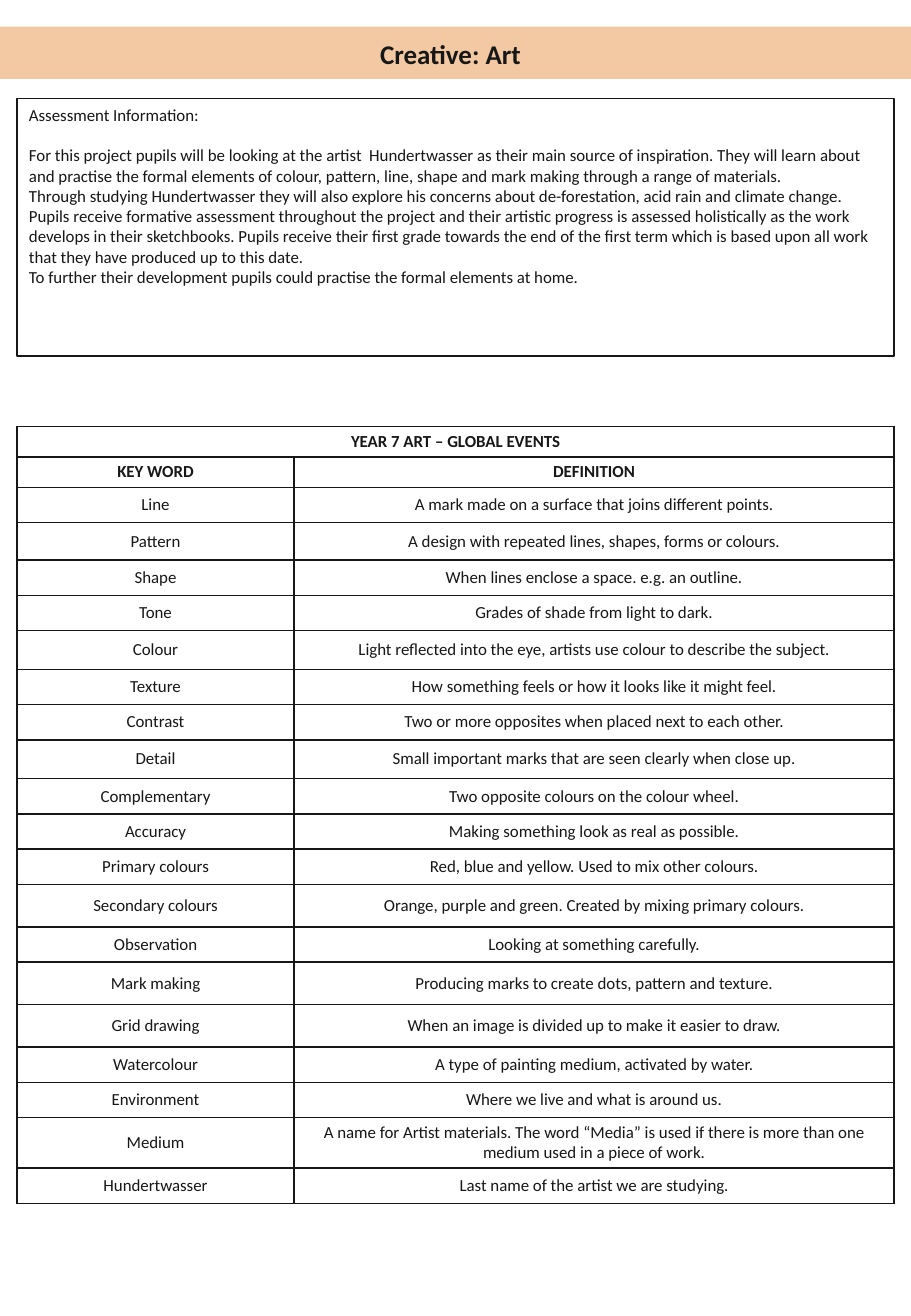
import dataclasses

import lxml.etree
import pptx
import pptx.dml.color
import pptx.enum.shapes
import pptx.enum.text
import pptx.oxml.ns
import pptx.util

COLUMNS, ROWS = 750, 1083
CELL = pptx.util.Inches(0.01)
ALIGN = pptx.enum.text.PP_ALIGN
ANCHOR = pptx.enum.text.MSO_ANCHOR


@dataclasses.dataclass(frozen=True)
class Theme:
    """Colours, font and type sizes of the slide."""
    ink: str = "181717"
    banner: str = "F3C9A4"
    paper: str = "FFFFFF"
    font: str = "Calibri"
    title_size: float = 16
    body_size: float = 10
    frame_width: float = 0.75
    border_width: float = 1


THEME = Theme()

ASSESSMENT = [
    "Assessment Information:",
    "For this project pupils will be looking at the artist  Hundertwasser as their main source of "
    "inspiration. They will learn about and practise the formal elements of colour, pattern, line, "
    "shape and mark making through a range of materials.",
    "Through studying Hundertwasser they will also explore his concerns about de-forestation, acid "
    "rain and climate change.",
    "Pupils receive formative assessment throughout the project and their artistic progress is "
    "assessed holistically as the work develops in their sketchbooks. Pupils receive their first "
    "grade towards the end of the first term which is based upon all work that they have produced "
    "up to this date.",
    "To further their development pupils could practise the formal elements at home.",
]

TABLE_TITLE = "YEAR 7 ART – GLOBAL EVENTS"
HEADINGS = ("KEY WORD", "DEFINITION")
KEY_WORDS = [
    ("Line", "A mark made on a surface that joins different points."),
    ("Pattern", "A design with repeated lines, shapes, forms or colours."),
    ("Shape", "When lines enclose a space. e.g. an outline."),
    ("Tone", "Grades of shade from light to dark."),
    ("Colour", "Light reflected into the eye, artists use colour to describe the subject."),
    ("Texture", "How something feels or how it looks like it might feel."),
    ("Contrast", "Two or more opposites when placed next to each other."),
    ("Detail", "Small important marks that are seen clearly when close up."),
    ("Complementary", "Two opposite colours on the colour wheel."),
    ("Accuracy", "Making something look as real as possible."),
    ("Primary colours", "Red, blue and yellow. Used to mix other colours."),
    ("Secondary colours", "Orange, purple and green. Created by mixing primary colours."),
    ("Observation", "Looking at something carefully."),
    ("Mark making", "Producing marks to create dots, pattern and texture."),
    ("Grid drawing", "When an image is divided up to make it easier to draw."),
    ("Watercolour", "A type of painting medium, activated by water."),
    ("Environment", "Where we live and what is around us."),
    ("Medium", "A name for Artist materials. The word “Media” is used if there is more than one "
               "medium used in a piece of work."),
    ("Hundertwasser", "Last name of the artist we are studying."),
]
HEADING_HEIGHT, WORD_HEIGHT = 25, 29
TALL_ROWS = {"Pattern": 31, "Colour": 32, "Detail": 32, "Secondary colours": 35,
             "Mark making": 35, "Grid drawing": 35, "Medium": 41}


def colour(value):
    """Return the colour object for a hex value."""
    return pptx.dml.color.RGBColor.from_string(value)


def write(paragraph, text, size, bold=False, alignment=ALIGN.LEFT):
    """Add one styled run of text to a paragraph."""
    paragraph.alignment = alignment
    run = paragraph.add_run()
    run.text = text
    run.font.name = THEME.font
    run.font.size = pptx.util.Pt(size)
    run.font.bold = bold
    run.font.color.rgb = colour(THEME.ink)


def add_panel(slide, box):
    """Add a plain rectangle with top-anchored text on the grid."""
    panel = slide.shapes.add_shape(
        pptx.enum.shapes.MSO_SHAPE.RECTANGLE, *(CELL * length for length in box))
    panel.shadow.inherit = False
    panel.fill.background()
    panel.line.fill.background()
    panel.text_frame.word_wrap = True
    panel.text_frame.vertical_anchor = ANCHOR.TOP
    return panel


def add_banner(slide, box):
    """Place the coloured title band."""
    banner = add_panel(slide, box)
    banner.fill.solid()
    banner.fill.fore_color.rgb = colour(THEME.banner)
    banner.text_frame.margin_top = CELL * 9
    banner.text_frame.margin_right = CELL * 18
    write(banner.text_frame.paragraphs[0], "Creative: Art", THEME.title_size, True, ALIGN.CENTER)


def add_assessment(slide, box):
    """Place the framed assessment text with a gap below its heading."""
    panel = add_panel(slide, box)
    panel.line.color.rgb = colour(THEME.ink)
    panel.line.width = pptx.util.Pt(THEME.frame_width)
    frame = panel.text_frame
    for index, text in enumerate(ASSESSMENT):
        paragraph = frame.add_paragraph() if index else frame.paragraphs[0]
        if index == 1:
            paragraph.space_before = pptx.util.Pt(12)
        write(paragraph, text, THEME.body_size)


def style_cell(cell):
    """Give a table cell its borders, fill, margins and anchor."""
    properties = cell._tc.get_or_add_tcPr()
    name = pptx.oxml.ns.qn
    for side in ("a:lnL", "a:lnR", "a:lnT", "a:lnB"):
        border = lxml.etree.SubElement(
            properties, name(side), w=str(pptx.util.Pt(THEME.border_width)))
        fill = lxml.etree.SubElement(border, name("a:solidFill"))
        lxml.etree.SubElement(fill, name("a:srgbClr"), val=THEME.ink)
    cell.fill.solid()
    cell.fill.fore_color.rgb = colour(THEME.paper)
    cell.margin_left = cell.margin_right = CELL * 8
    cell.margin_top = cell.margin_bottom = CELL * 4
    cell.vertical_anchor = ANCHOR.MIDDLE


def add_key_words(slide, box):
    """Place the key word table with its merged title row."""
    rows = [(TABLE_TITLE, ""), HEADINGS, *KEY_WORDS]
    table = slide.shapes.add_table(
        len(rows), len(HEADINGS), *(CELL * length for length in box)).table
    table.first_row = table.horz_banding = False
    word_width = 228
    for column, width in zip(table.columns, (word_width, box[2] - word_width)):
        column.width = CELL * width
    for index, texts in enumerate(rows):
        heading = index < 2
        height = HEADING_HEIGHT if heading else TALL_ROWS.get(texts[0], WORD_HEIGHT)
        table.rows[index].height = CELL * height
        for cell, text in zip(table.rows[index].cells, texts):
            style_cell(cell)
            if text:
                write(cell.text_frame.paragraphs[0], text, THEME.body_size, heading, ALIGN.CENTER)
    table.cell(0, 0).merge(table.cell(0, 1))


def main():
    """Build the slide and save it."""
    presentation = pptx.Presentation()
    presentation.slide_width = CELL * COLUMNS
    presentation.slide_height = CELL * ROWS
    slide = presentation.slides.add_slide(presentation.slide_layouts[6])
    margin = 14
    width = COLUMNS - 2 * margin
    add_key_words(slide, (margin, 351, width, 640))
    add_banner(slide, (0, 22, COLUMNS, 43))
    add_assessment(slide, (margin, 81, width, 212))
    presentation.save("out.pptx")


if __name__ == "__main__":
    main()
